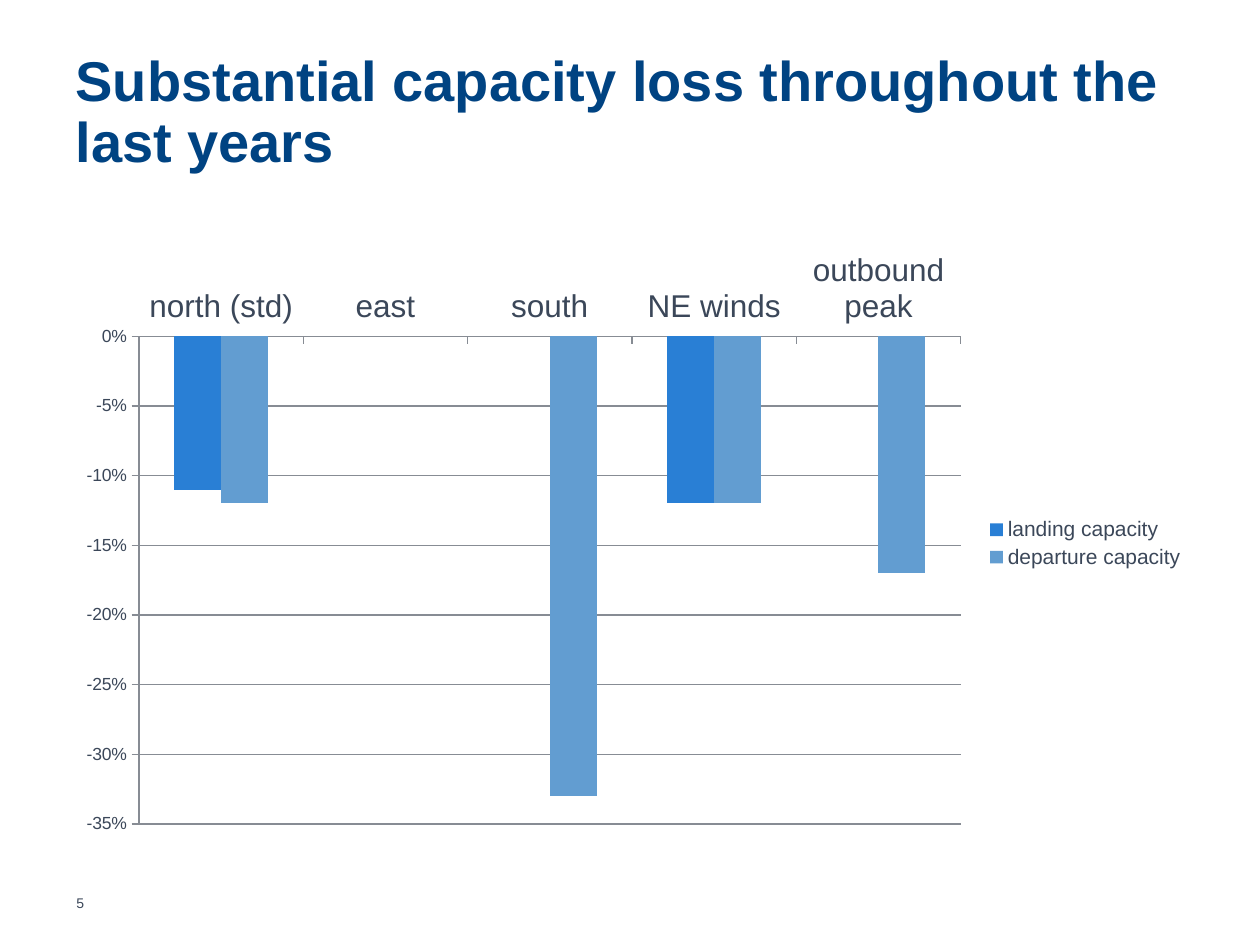
"""Build the slide on capacity loss with its clustered column chart."""
import pptx
import pptx.util
import pptx.chart.data
import pptx.dml.color
import pptx.enum.chart
import pptx.enum.text

THEME = {
    "font": "Arial",
    "title_color": "004382", "text_color": "3B4759", "line_color": "878C94",
    "series_colors": ["297FD5", "629DD1"],
    "title_size": 32, "category_size": 18, "legend_size": 12,
    "chart_size": 10, "number_size": 8,
}
PX = 914400 / 126


def box(*lengths):
    return [round(length * PX) for length in lengths]


def format_font(font, size, color, bold=False):
    values = {"name": THEME["font"], "size": pptx.util.Pt(size), "bold": bold}
    for name, value in values.items():
        setattr(font, name, value)
    font.color.rgb = pptx.dml.color.RGBColor.from_string(color)


presentation = pptx.Presentation()
presentation.slide_width, presentation.slide_height = box(1260, 945)
slide = presentation.slides.add_slide(presentation.slide_layouts[5])

title = slide.shapes.title
title.left, title.top, title.width, title.height = box(63, 55, 1134, 118)
title.text_frame.text = "Substantial capacity loss throughout the last years"
title_format = {
    "auto_size": pptx.enum.text.MSO_AUTO_SIZE.NONE,
    "vertical_anchor": pptx.enum.text.MSO_ANCHOR.MIDDLE,
    "word_wrap": True,
}
for name, value in title_format.items():
    setattr(title.text_frame, name, value)
paragraph = title.text_frame.paragraphs[0]
paragraph.alignment = pptx.enum.text.PP_ALIGN.LEFT
paragraph.line_spacing = 0.9
format_font(paragraph.runs[0].font, THEME["title_size"], THEME["title_color"], True)

chart_data = pptx.chart.data.CategoryChartData(number_format="0%")
chart_data.categories = ["north (std)", "east", "south", "NE winds", "outbound peak"]
chart_data.add_series("landing capacity", [-0.11, 0, 0, -0.12, 0])
chart_data.add_series("departure capacity", [-0.12, 0, -0.33, -0.12, -0.17])
chart = slide.shapes.add_chart(
    pptx.enum.chart.XL_CHART_TYPE.COLUMN_CLUSTERED, *box(64, 241, 1134, 605), chart_data
).chart
chart.has_title = False
format_font(chart.font, THEME["chart_size"], THEME["text_color"])

chart.has_legend = True
chart.legend.position = pptx.enum.chart.XL_LEGEND_POSITION.RIGHT
chart.legend.include_in_layout = False
format_font(chart.legend.font, THEME["legend_size"], THEME["text_color"])

plot = chart.plots[0]
plot.gap_width = 150
plot.overlap = 0
plot.vary_by_categories = False
for series, color in zip(plot.series, THEME["series_colors"]):
    series.invert_if_negative = False
    series.format.fill.solid()
    series.format.fill.fore_color.rgb = pptx.dml.color.RGBColor.from_string(color)

value_axis = chart.value_axis
axis_format = {
    "minimum_scale": -0.35, "maximum_scale": 0, "major_unit": 0.05,
    "has_major_gridlines": True,
}
for name, value in axis_format.items():
    setattr(value_axis, name, value)
value_axis.tick_labels.number_format = "0%"
value_axis.tick_labels.number_format_is_linked = False
chart.category_axis.tick_label_position = pptx.enum.chart.XL_TICK_LABEL_POSITION.HIGH
format_font(chart.category_axis.tick_labels.font, THEME["category_size"], THEME["text_color"])
for axis in (chart.category_axis, value_axis):
    axis.major_tick_mark = pptx.enum.chart.XL_TICK_MARK.OUTSIDE
for lines in (chart.category_axis, value_axis, value_axis.major_gridlines):
    lines.format.line.width = pptx.util.Pt(0.75)
    lines.format.line.color.rgb = pptx.dml.color.RGBColor.from_string(THEME["line_color"])

number = slide.shapes.add_textbox(*box(64, 888, 127, 39))
number.text_frame.word_wrap = True
number.text_frame.text = "5"
format_font(number.text_frame.paragraphs[0].runs[0].font, THEME["number_size"], THEME["text_color"])

presentation.save("out.pptx")
